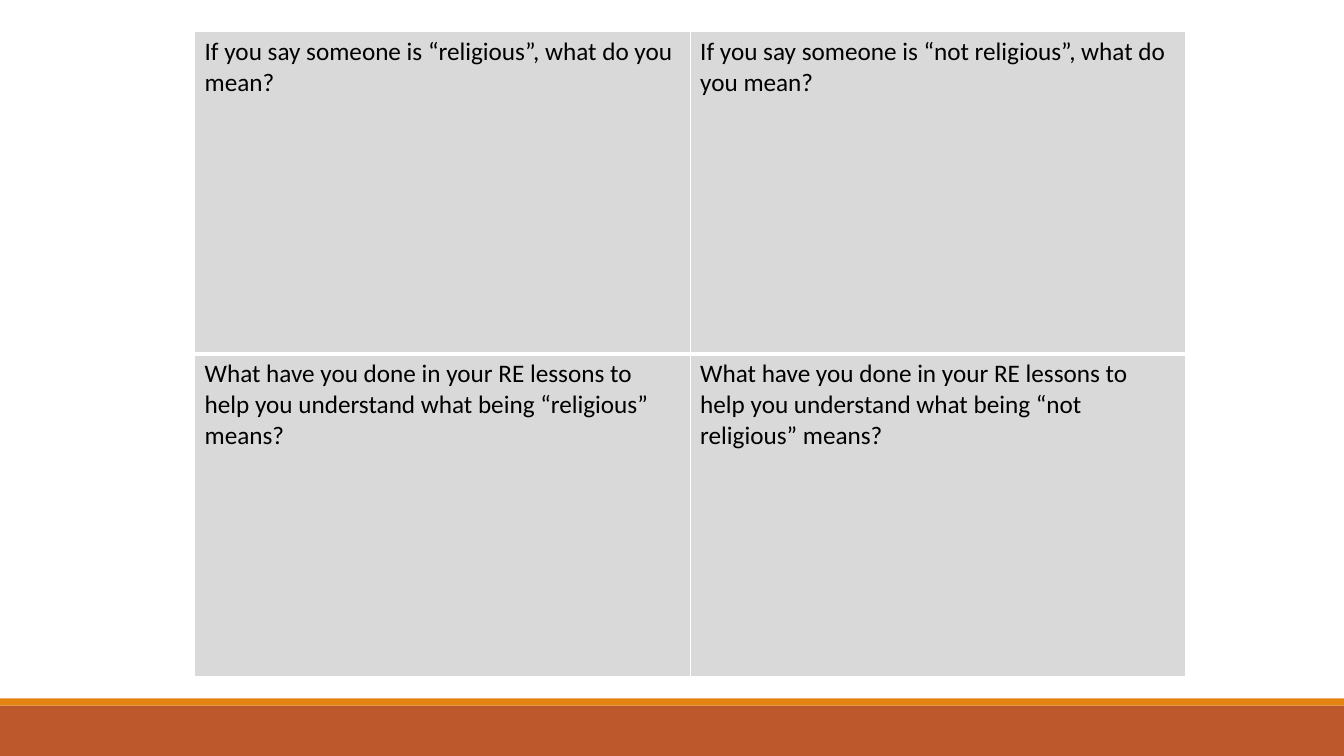
"""Build a slide with a two-by-two grid of questions about being religious."""
from lxml.etree import SubElement
from pptx import Presentation
from pptx.dml.color import RGBColor
from pptx.enum.shapes import MSO_SHAPE as Shape
from pptx.oxml.ns import qn
from pptx.util import Inches, Pt

ROWS = [
    ["If you say someone is “religious”, what do you mean?",
     "If you say someone is “not religious”, what do you mean?"],
    ["What have you done in your RE lessons to help you understand what being “religious” means?",
     "What have you done in your RE lessons to help you understand what being “not religious” means?"],
]
BANDS = [(7, 0.5, "BD582C"), (6.93, 0.07, "E48312")]
WIDE, HIGH = 13.33, 7.5
LEFT, TOP, COL, ROW = 1.93, 0.31, 4.915, 3.2
EDGES = [{"L": 1, "R": 1, "T": 1, "B": 3}, {"L": 1, "R": 1, "T": 3, "B": 1}]


def paint(fill, color):
    fill.solid()
    fill.fore_color.rgb = RGBColor.from_string(color)


def add_edges(cell, edges, color):
    props = cell._tc.get_or_add_tcPr()
    for side, width in edges.items():
        line = SubElement(props, qn(f"a:ln{side}"), w=str(Pt(width)))
        SubElement(SubElement(line, qn("a:solidFill")), qn("a:srgbClr"), val=color)


def add_band(slide, top, height, color):
    band = slide.shapes.add_shape(
        Shape.RECTANGLE, 0, Inches(top), Inches(WIDE), Inches(height))
    band.shadow.inherit = False
    paint(band.fill, color)
    band.line.fill.background()


def add_grid(slide):
    count = len(ROWS[0])
    grid = slide.shapes.add_table(
        len(ROWS), count, Inches(LEFT), Inches(TOP),
        Inches(COL * count), Inches(ROW * len(ROWS))).table
    grid.first_row = grid.horz_banding = False
    for r, texts in enumerate(ROWS):
        for c, text in enumerate(texts):
            cell = grid.cell(r, c)
            cell.text_frame.text = text
            font = cell.text_frame.paragraphs[0].runs[0].font
            font.name, font.size, font.bold = "Calibri", Pt(18), False
            paint(font.fill, "000000")
            add_edges(cell, EDGES[r], "FFFFFF")
            paint(cell.fill, "D9D9D9")


def main():
    deck = Presentation()
    deck.slide_width, deck.slide_height = Inches(WIDE), Inches(HIGH)
    slide = deck.slides.add_slide(deck.slide_layouts[6])
    paint(slide.background.fill, "FFFFFF")
    for band in BANDS:
        add_band(slide, *band)
    add_grid(slide)
    deck.save("out.pptx")


if __name__ == "__main__":
    main()
